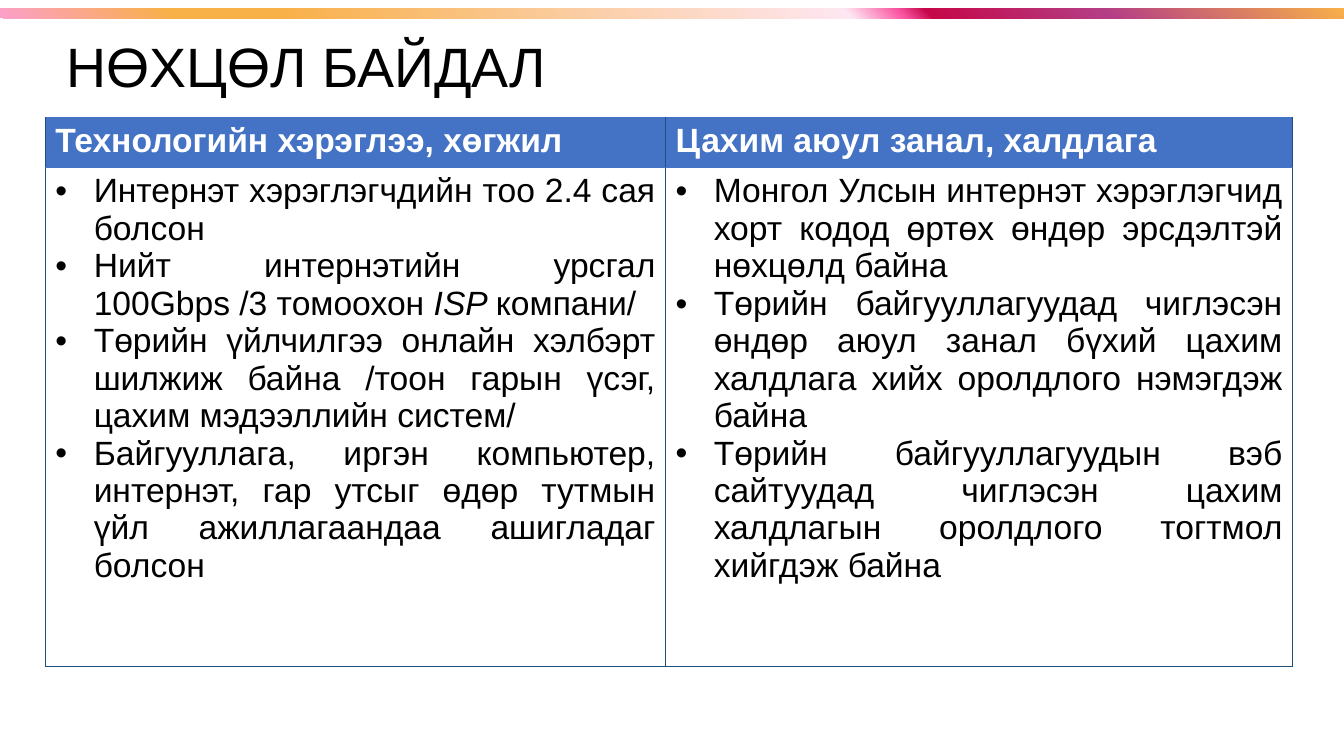
from lxml.etree import SubElement
from pptx import Presentation
from pptx.dml.color import RGBColor as RGB
from pptx.enum.shapes import MSO_SHAPE as Shape
from pptx.enum.text import MSO_ANCHOR as Anchor, PP_ALIGN as Align
from pptx.oxml import parse_xml
from pptx.oxml.ns import nsdecls, qn
from pptx.util import Inches, Pt

COLORS = {"text": "000000", "white": "FFFFFF", "header": "4472C4", "border": "1F4E79"}
BAR_STOPS = [(0, "FC9FCB"), (13, "F8B049"), (21, "F8B049"), (63, "FEE7F2"),
             (67, "F952A0"), (69, "C50849"), (82, "B43E85"), (100, "F8B049")]
BORDERS = [("lnL", "border", 1), ("lnR", "border", 1), ("lnT", "header", 0.5)]
COLUMNS = [
    (6.15, "Технологийн хэрэглээ, хөгжил", [
        ["Интернэт хэрэглэгчдийн тоо 2.4 сая болсон"],
        ["Нийт интернэтийн урсгал 100Gbps /3 томоохон ", "ISP ", "компани/"],
        ["Төрийн үйлчилгээ онлайн хэлбэрт шилжиж байна /тоон гарын үсэг, "
         "цахим мэдээллийн систем/"],
        ["Байгууллага, иргэн компьютер, интернэт, гар утсыг өдөр тутмын "
         "үйл ажиллагаандаа ашигладаг болсон"]]),
    (6.22, "Цахим аюул занал, халдлага", [
        ["Монгол Улсын интернэт хэрэглэгчид хорт кодод өртөх өндөр эрсдэлтэй "
         "нөхцөлд байна"],
        ["Төрийн байгууллагуудад чиглэсэн өндөр аюул занал бүхий цахим халдлага "
         "хийх оролдлого нэмэгдэж байна"],
        ["Төрийн байгууллагуудын вэб сайтуудад чиглэсэн цахим халдлагын "
         "оролдлого тогтмол хийгдэж байна"]]),
]
ROWS = [0.44, 4.95]


def set_font(para, size, color, bold=False):
    font = para.font
    font.name, font.size, font.bold = "Arial", Pt(size), bold
    font.color.rgb = RGB.from_string(COLORS[color])


def set_borders(cell, borders):
    props = cell._tc.get_or_add_tcPr()
    for index, (side, color, width) in enumerate(borders):
        props.insert(index, parse_xml(
            f'<a:{side} {nsdecls("a")} w="{Pt(width)}"><a:solidFill>'
            f'<a:srgbClr val="{COLORS[color]}"/></a:solidFill></a:{side}>'))


deck = Presentation()
deck.slide_width, deck.slide_height = Inches(13.33), Inches(7.5)
page = deck.slides.add_slide(deck.slide_layouts[6])

# Title
title = page.shapes.add_textbox(Inches(0.56), Inches(0.34), Inches(11.5), Inches(0.7))
frame = title.text_frame
frame.word_wrap, frame.vertical_anchor = True, Anchor.MIDDLE
para = frame.paragraphs[0]
para.text, para.line_spacing = "НӨХЦӨЛ БАЙДАЛ", 0.9
set_font(para, 39.6, "text")

# Gradient bar across the top
bar = page.shapes.add_shape(Shape.RECTANGLE, 0, Inches(0.08), deck.slide_width, Inches(0.1))
bar.shadow.inherit = False
bar.line.fill.background()
bar.fill.gradient()
bar.fill.gradient_angle = 45
stops = bar._element.spPr.find(qn("a:gradFill")).find(qn("a:gsLst"))
for stop in list(stops):
    stops.remove(stop)
for position, color in BAR_STOPS:
    stop = SubElement(stops, qn("a:gs"), pos=str(position * 1000))
    SubElement(stop, qn("a:srgbClr"), val=color)

# Table
table = page.shapes.add_table(len(ROWS), len(COLUMNS), Inches(0.45), Inches(1.16),
                              Inches(12.37), Inches(sum(ROWS))).table
table.first_row = table.horz_banding = False
for row, height in zip(table.rows, ROWS):
    row.height = Inches(height)

for col, (width, heading, items) in enumerate(COLUMNS):
    table.columns[col].width = Inches(width)
    header, body = table.cell(0, col), table.cell(1, col)

    # Header cell
    set_borders(header, BORDERS + [("lnB", "header", 0.5)])
    header.fill.solid()
    header.fill.fore_color.rgb = RGB.from_string(COLORS["header"])
    header.text = heading
    set_font(header.text_frame.paragraphs[0], 24, "white", bold=True)

    # Bulleted cell; the second span of an item is italic
    set_borders(body, BORDERS + [("lnB", "border", 1)])
    body.fill.background()
    for number, item in enumerate(items):
        frame = body.text_frame
        para = frame.add_paragraph() if number else frame.paragraphs[0]
        para.alignment = Align.JUSTIFY
        set_font(para, 24, "text")
        props = para._p.get_or_add_pPr()
        props.set("marL", str(Inches(0.38)))
        props.set("indent", str(-Inches(0.38)))
        props.insert(0, parse_xml(f'<a:buChar {nsdecls("a")} char="•"/>'))
        props.insert(0, parse_xml(f'<a:buFont {nsdecls("a")} typeface="Arial"/>'))
        for place, words in enumerate(item):
            span = para.add_run()
            span.text = words
            if place == 1:
                span.font.italic = True

deck.save("out.pptx")
